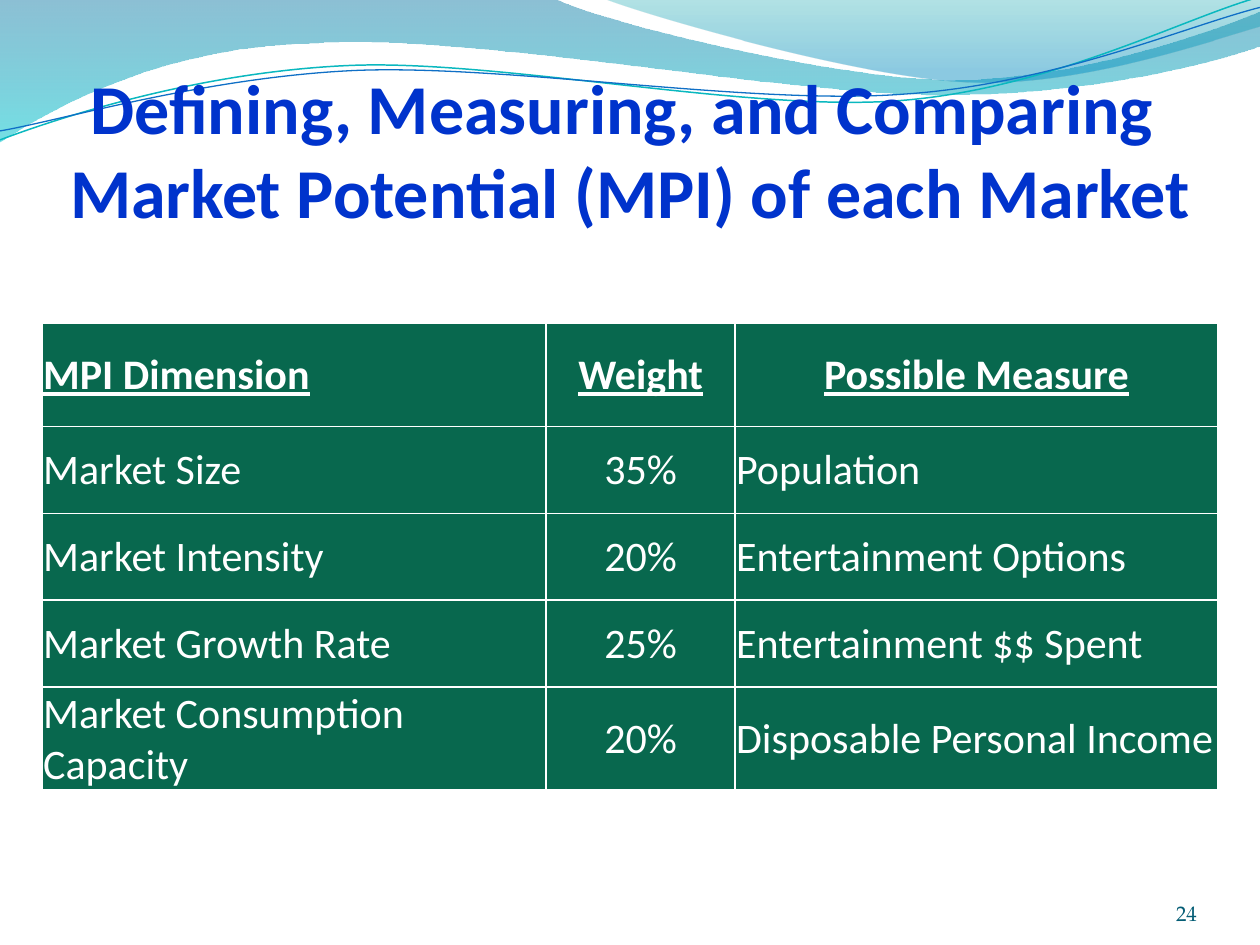
from dataclasses import dataclass
from math import cos, radians, sin

from lxml.etree import SubElement
from pptx import Presentation
from pptx.dml.color import RGBColor
from pptx.enum.text import MSO_ANCHOR as Anchor, PP_ALIGN as Align
from pptx.oxml import parse_xml
from pptx.oxml.ns import nsdecls, qn
from pptx.util import Cm, Pt


@dataclass(frozen=True)
class Theme:
    """Colours, fonts and type sizes of the slide."""
    title: str = "0033CC"
    cell: str = "08684E"
    white: str = "FFFFFF"
    number: str = "045D75"
    teal: str = "0AB8BF"
    blue: str = "0F6FC6"
    left_wave: tuple = ((0, "0074A1", 45), (1, "00C6CF", 55))
    right_wave: tuple = ((0, "00A1A9", 30), (0.8, "008BBF", 45))
    font: str = "Calibri"
    number_font: str = "TeX Gyre Pagella"
    title_size: int = 40
    table_size: int = 24
    number_size: int = 12


THEME = Theme()
TILT = -2.7

LEFT_WAVE = [
    [(0, 0)], [(11.18, -0.03)],
    [(12.09, 0.43), (16.87, 1.6), (19.25, 1.6)],
    [(21.67, 1.6), (24.33, 0.66), (25.4, 0.23)],
    [(25.43, 0.91)],
    [(24.97, 1.12), (22.1, 1.93), (18.95, 1.91)],
    [(15.8, 1.91), (9.7, 0.71), (6.53, 0.86)],
    [(3.28, 0.91), (1.17, 2.11), (-0.03, 2.87)],
    [(0, 0)],
]
RIGHT_WAVE = [
    [(12.17, -0.03)],
    [(12.93, 0.28), (17.32, 1.57), (19.53, 1.65)],
    [(21.74, 1.75), (24.41, 0.81), (25.4, 0.53)],
    [(25.4, 0)], [(12.17, -0.03)],
]
TEAL_LINE = [
    [(0, 2.82)],
    [(1.22, 2.36), (4.01, 1.45), (7.04, 1.32)],
    [(10.03, 1.19), (15.06, 2.26), (18.11, 2.03)],
    [(21.16, 1.8), (23.83, 0.38), (25.35, -0.05)],
]
BLUE_LINE = [
    [(0, 2.64)],
    [(1.19, 2.44), (4.17, 1.55), (7.19, 1.42)],
    [(10.24, 1.3), (15.16, 2.13), (18.21, 1.9)],
    [(21.23, 1.7), (23.9, 0.53), (25.4, 0.15)],
]
ROWS = [
    ("MPI Dimension", "Weight", "Possible Measure"),
    ("Market Size", "35%", "Population"),
    ("Market Intensity", "20%", "Entertainment Options"),
    ("Market Growth Rate", "25%", "Entertainment $$ Spent"),
    ("Market Consumption Capacity", "20%", "Disposable Personal Income"),
]


def turn(point, center, degrees):
    """Rotate a point about a center."""
    x, y = point[0] - center[0], point[1] - center[1]
    c, s = cos(radians(degrees)), sin(radians(degrees))
    return center[0] + x * c - y * s, center[1] + x * s + y * c


def add_outline(slide, box, segments, close, center=(0, 0), rotation=0):
    """Draw a freeform of straight and cubic segments relative to the box."""
    left, top = box[:2]
    turned = [turn(point, center, -rotation) for segment in segments for point in segment]
    points = [(Cm(left + x), Cm(top + y)) for x, y in turned]
    builder = slide.shapes.build_freeform(*points[0])
    builder.add_line_segments(points[1:], close=close)
    shape = builder.convert_to_shape()
    shape.shadow.inherit = False
    shape.rotation = rotation
    path = next(shape.element.iter(qn("a:path")))
    lines = iter(path.findall(qn("a:lnTo")))
    for segment in segments[1:]:
        parts = [next(lines) for _ in segment]
        if len(parts) == 3:
            parts[0].addprevious(curve := parse_xml(f'<a:cubicBezTo {nsdecls("a")}/>'))
            for part in parts:
                curve.append(part[0])
                path.remove(part)
    return shape


def add_header(slide, box):
    """Draw the two translucent waves and the two thin curves."""
    for segments, stops in ((LEFT_WAVE, THEME.left_wave), (RIGHT_WAVE, THEME.right_wave)):
        wave = add_outline(slide, box, segments, True)
        wave.line.fill.background()
        wave.fill.gradient()
        wave.fill.gradient_angle = 270
        for stop, (position, color, opacity) in zip(wave.fill.gradient_stops, stops):
            stop.position = position
            stop.color.rgb = RGBColor.from_string(color)
        colors = wave.element.spPr.iter(qn("a:srgbClr"))
        for color, (position, value, opacity) in zip(colors, stops):
            SubElement(color, qn("a:alpha")).set("val", str(opacity * 1000))
    for segments, center, color, width in (
            (TEAL_LINE, (12.67, 1.46), THEME.teal, 0.85),
            (BLUE_LINE, (12.7, 1.5), THEME.blue, 0.75)):
        curve = add_outline(slide, box, segments, False, center, TILT)
        curve.fill.background()
        curve.line.color.rgb = RGBColor.from_string(color)
        curve.line.width = Pt(width)


def write(frame, text, size, color, align, font=THEME.font, bold=False, underline=False):
    """Set one formatted paragraph in a text frame."""
    frame.text = text
    paragraph = frame.paragraphs[0]
    paragraph.alignment = align
    for run in paragraph.runs:
        style = run.font
        style.name, style.size = font, Pt(size)
        style.bold, style.underline = bold, underline
        style.color.rgb = RGBColor.from_string(color)


def add_text(slide, box, *args, **style):
    """Add a bottom-anchored text box without margins."""
    frame = slide.shapes.add_textbox(*map(Cm, box)).text_frame
    frame.word_wrap = True
    frame.vertical_anchor = Anchor.BOTTOM
    frame.margin_left = frame.margin_right = frame.margin_top = frame.margin_bottom = 0
    write(frame, *args, **style)


def style_cell(cell):
    """Fill a cell, tighten its margins and rule its four sides."""
    cell.vertical_anchor = Anchor.MIDDLE
    cell.margin_left = cell.margin_right = Cm(0.02)
    cell.margin_top, cell.margin_bottom = Cm(0.03), Cm(0.01)
    cell.fill.solid()
    cell.fill.fore_color.rgb = RGBColor.from_string(THEME.cell)
    properties = cell._tc.get_or_add_tcPr()
    for index, side in enumerate("LRTB"):
        properties.insert(index, parse_xml(
            f'<a:ln{side} {nsdecls("a")} w="{Pt(1)}"><a:solidFill>'
            f'<a:srgbClr val="{THEME.white}"/></a:solidFill></a:ln{side}>'))


def add_measures(slide, box):
    """Place the table of dimensions, weights and measures."""
    table = slide.shapes.add_table(len(ROWS), len(ROWS[0]), *map(Cm, box)).table
    for column, width in zip(table.columns, (10.16, 3.81, 9.73)):
        column.width = Cm(width)
    for index, values in enumerate(ROWS):
        header = index == 0
        table.rows[index].height = Cm(2.08 if header else 1.75)
        for position, text in enumerate(values):
            cell = table.cell(index, position)
            centered = position == 1 or (header and position == 2)
            style_cell(cell)
            write(cell.text_frame, text, THEME.table_size, THEME.white,
                  Align.CENTER if centered else Align.LEFT, bold=header, underline=header)


def main():
    """Build and save the slide."""
    presentation = Presentation()
    presentation.slide_width, presentation.slide_height = Cm(25.4), Cm(19.05)
    slide = presentation.slides.add_slide(presentation.slide_layouts[6])
    add_header(slide, (0, 0, 25.4, 2.87))
    add_text(slide, (1.27, 2.84, 22.86, 1.85),
             "Defining, Measuring, and Comparing \vMarket Potential (MPI) of each Market",
             THEME.title_size, THEME.title, Align.CENTER, bold=True)
    add_measures(slide, (0.85, 6.52, 23.7, 9.08))
    add_text(slide, (22.02, 17.65, 2.11, 1.02), "24", THEME.number_size,
             THEME.number, Align.RIGHT, font=THEME.number_font)
    presentation.save("out.pptx")


if __name__ == "__main__":
    main()
